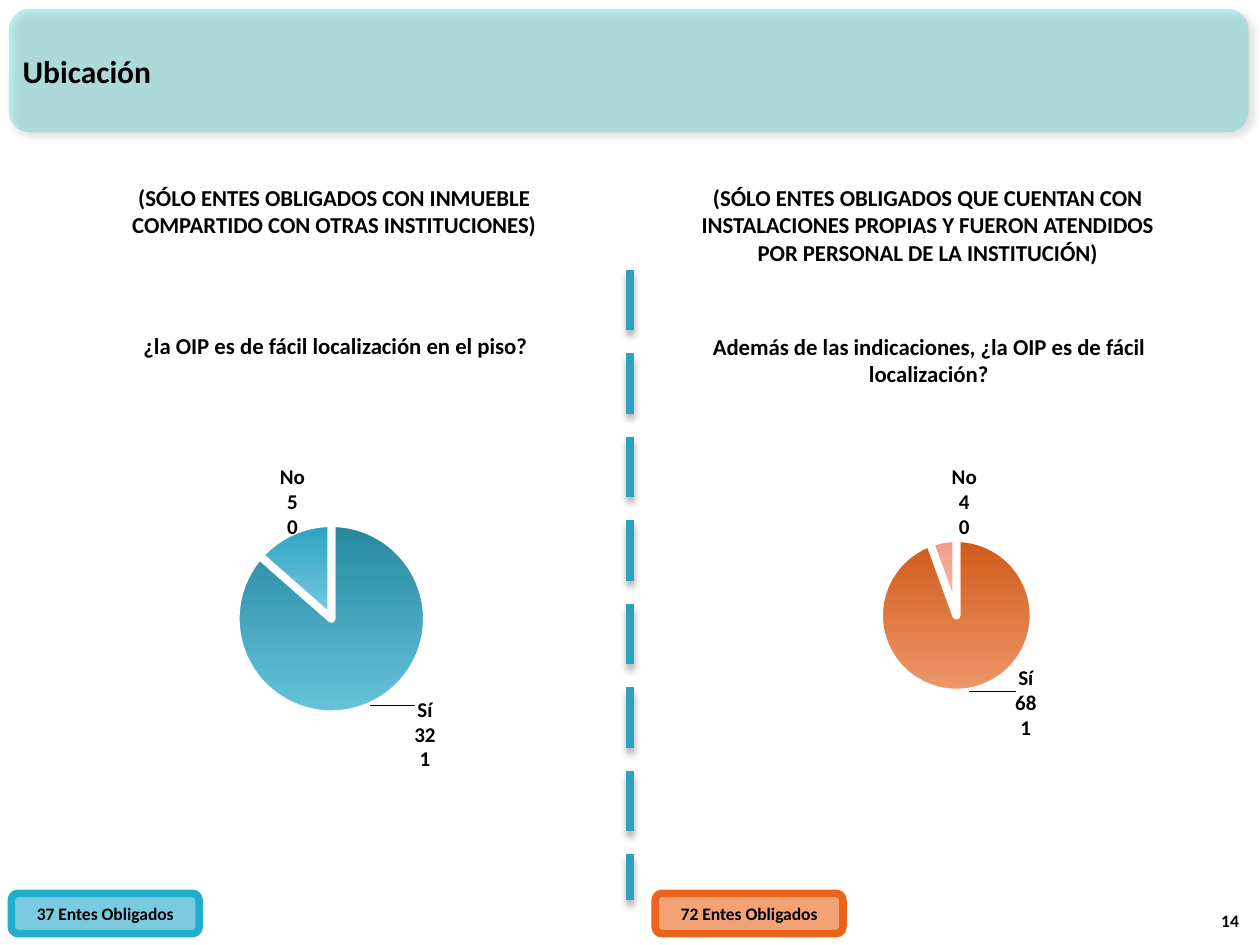
from lxml import etree
from pptx import Presentation
from pptx.chart.data import CategoryChartData
from pptx.dml.color import RGBColor
from pptx.enum.chart import XL_CHART_TYPE, XL_LABEL_POSITION
from pptx.enum.dml import MSO_LINE
from pptx.enum.shapes import MSO_CONNECTOR, MSO_SHAPE
from pptx.enum.text import MSO_ANCHOR, PP_ALIGN
from pptx.oxml import parse_xml
from pptx.oxml.ns import qn
from pptx.util import Inches, Pt

COLORS = {
    "text": "000000", "white": "FFFFFF", "banner": "33CCCC", "divider": "2DA2BF",
    "blue_fill": "7ACBE0", "blue_line": "1FAECD",
    "orange_fill": "F3A276", "orange_line": "EB641B",
}
DRAWING = "http://schemas.openxmlformats.org/drawingml/2006/main"


def rgb(value):
    return RGBColor.from_string(COLORS.get(value, value))


class SlideBuilder:
    """Holds the text style and the current page."""
    font_name = "Calibri"

    def __init__(self, page):
        self.page = page
        self.shapes = page.shapes

    def style(self, font, size):
        font.name, font.size, font.bold = self.font_name, Pt(size), True
        font.color.rgb = rgb("text")

    def fill_text(self, frame, text, size, align, anchor):
        frame.word_wrap = True
        frame.vertical_anchor = anchor
        para = frame.paragraphs[0]
        para.alignment = align
        span = para.add_run()
        span.text = text
        self.style(span.font, size)

    def place(self, shape, area):
        shape.left, shape.top, shape.width, shape.height = map(Inches, area)

    def effects(self, shape, alpha, direction):
        """Give the shape a soft shadow."""
        shape._element.spPr.append(parse_xml(
            f'<a:effectLst xmlns:a="{DRAWING}">'
            f'<a:outerShdw blurRad="{Pt(4)}" dist="{Pt(3)}" dir="{direction * 60000}" '
            f'algn="ctr" rotWithShape="0"><a:srgbClr val="{COLORS["text"]}">'
            f'<a:alpha val="{alpha * 1000}"/></a:srgbClr></a:outerShdw></a:effectLst>'))

    def title(self, text, area):
        title = self.shapes.title
        self.place(title, area)
        self.fill_text(title.text_frame, text, 18, PP_ALIGN.LEFT, MSO_ANCHOR.MIDDLE)

    def banner(self, area):
        box = self.shapes.add_shape(MSO_SHAPE.ROUNDED_RECTANGLE, *map(Inches, area))
        box.fill.solid()
        box.fill.fore_color.rgb = rgb("banner")
        color = box._element.spPr.find(".//" + qn("a:srgbClr"))
        etree.SubElement(color, qn("a:alpha")).set("val", "30000")
        box.line.fill.background()
        self.effects(box, 40, 45)
        self.shapes._spTree.insert(2, box._element)  # behind the title

    def text(self, text, area, size=13, align=PP_ALIGN.CENTER, anchor=MSO_ANCHOR.TOP):
        box = self.shapes.add_textbox(*map(Inches, area))
        self.fill_text(box.text_frame, text, size, align, anchor)

    def divider(self, x, top, bottom):
        line = self.shapes.add_connector(
            MSO_CONNECTOR.STRAIGHT, Inches(x), Inches(top), Inches(x), Inches(bottom))
        line.line.color.rgb = rgb("divider")
        line.line.width = Pt(4.33)
        line.line.dash_style = MSO_LINE.LONG_DASH
        self.effects(line, 35, 90)

    def badge(self, text, left, fill, outline):
        box = self.shapes.add_shape(
            MSO_SHAPE.ROUNDED_RECTANGLE, *map(Inches, (left, 7.09, 1.49, 0.32)))
        box.shadow.inherit = False
        box.fill.solid()
        box.fill.fore_color.rgb = rgb(fill)
        box.line.color.rgb = rgb(outline)
        box.line.width = Pt(4.33)
        self.fill_text(box.text_frame, text, 10, PP_ALIGN.CENTER, MSO_ANCHOR.MIDDLE)

    def pie(self, area, values, gradients, plot_area, label_offsets):
        data = CategoryChartData(number_format="0")
        data.categories = ["Sí", "No"]
        data.add_series("Series 1", values)
        chart = self.shapes.add_chart(
            XL_CHART_TYPE.PIE, *map(Inches, area), data).chart
        chart.has_legend = chart.has_title = False
        self.style(chart.font, 12)
        plot = chart.plots[0]
        plot.vary_by_categories = False
        series = plot.series[0]
        self.layout(chart._chartSpace.chart.plotArea, plot_area, inner=True)

        # Labels with category, value and percentage on separate lines
        labels = series.data_labels
        labels.show_category_name = labels.show_value = labels.show_percentage = True
        labels.number_format, labels.number_format_is_linked = "0", False
        labels.position = XL_LABEL_POSITION.INSIDE_END
        self.style(labels.font, 12)
        self.separate(labels._element)

        for index, (stops, offset) in enumerate(zip(gradients, label_offsets)):
            point = series.points[index]
            fill = point.format.fill
            fill.gradient()
            fill.gradient_angle = 270
            for stop, color, position in zip(fill.gradient_stops, stops, (0, 1)):
                stop.color.rgb = rgb(color)
                stop.position = position
            point.format.line.color.rgb = rgb("white")
            point.format.line.width = Pt(4.5)
            self.style(point.data_label.font, 12)
            point.data_label.position = XL_LABEL_POSITION.INSIDE_END
            label = labels._element.findall(qn("c:dLbl"))[index]
            for name in ("c:showVal", "c:showCatName", "c:showPercent"):
                label.find(qn(name)).set("val", "1")
            self.separate(label)
            self.layout(label, offset)

    def separate(self, labels):
        """Break the parts of a label into lines."""
        separator = etree.Element(qn("c:separator"))
        separator.text = "\n"
        labels.find(qn("c:showBubbleSize")).addnext(separator)

    def layout(self, parent, numbers, inner=False):
        """Set a manual layout, in fractions of the chart."""
        for old in parent.findall(qn("c:layout")):
            parent.remove(old)
        layout = etree.Element(qn("c:layout"))
        manual = etree.SubElement(layout, qn("c:manualLayout"))
        settings = list(zip("xywh", numbers))
        if inner:
            settings = [("layoutTarget", "inner"), ("xMode", "edge"),
                        ("yMode", "edge")] + settings
        for name, value in settings:
            etree.SubElement(manual, qn("c:" + name)).set("val", str(value))
        parent.insert(0 if inner else 1, layout)


def main():
    deck = Presentation()
    deck.slide_width, deck.slide_height = Inches(10), Inches(7.5)
    page = SlideBuilder(deck.slides.add_slide(deck.slide_layouts[5]))

    # Heading and page number
    page.banner((0.07, 0.07, 9.84, 0.98))
    page.title("Ubicación", (0.08, 0.09, 9.29, 0.94))
    page.text("14", (9.45, 7.04, 0.48, 0.4), 10, PP_ALIGN.RIGHT, MSO_ANCHOR.BOTTOM)
    page.divider(5, 2.14, 7.14)

    # Left half: shared buildings
    page.text("(SÓLO ENTES OBLIGADOS CON INMUEBLE COMPARTIDO CON OTRAS INSTITUCIONES)",
              (0.93, 1.41, 3.44, 0.54))
    page.text("¿la OIP es de fácil localización en el piso?", (0.81, 2.58, 3.7, 0.32))
    page.pie((-0.37, 3.28, 6, 3.23), (32, 5),
             (("25869E", "66C4DB"), ("2DA2BF", "7ACBE0")),
             (0.26, 0.27, 0.48, 0.47), ((0.09, 0.18), (-0.02, -0.18)))
    page.badge("37 Entes Obligados", 0.09, "blue_fill", "blue_line")

    # Right half: own premises
    page.text("(SÓLO ENTES OBLIGADOS QUE CUENTAN CON INSTALACIONES PROPIAS "
              "Y FUERON ATENDIDOS POR PERSONAL DE LA INSTITUCIÓN)",
              (5.35, 1.41, 4.02, 0.76))
    page.text("Además de las indicaciones, ¿la OIP es de fácil localización?",
              (5.48, 2.59, 3.78, 0.54))
    page.pie((4.59, 3.27, 6, 3.23), (68, 4),
             (("D15918", "EE986A"), ("F09B88", "F6C3B7")),
             (0.3, 0.31, 0.4, 0.38), ((0.09, 0.14), (0.01, -0.2)))
    page.badge("72 Entes Obligados", 5.2, "orange_fill", "orange_line")

    deck.save("out.pptx")


if __name__ == "__main__":
    main()
